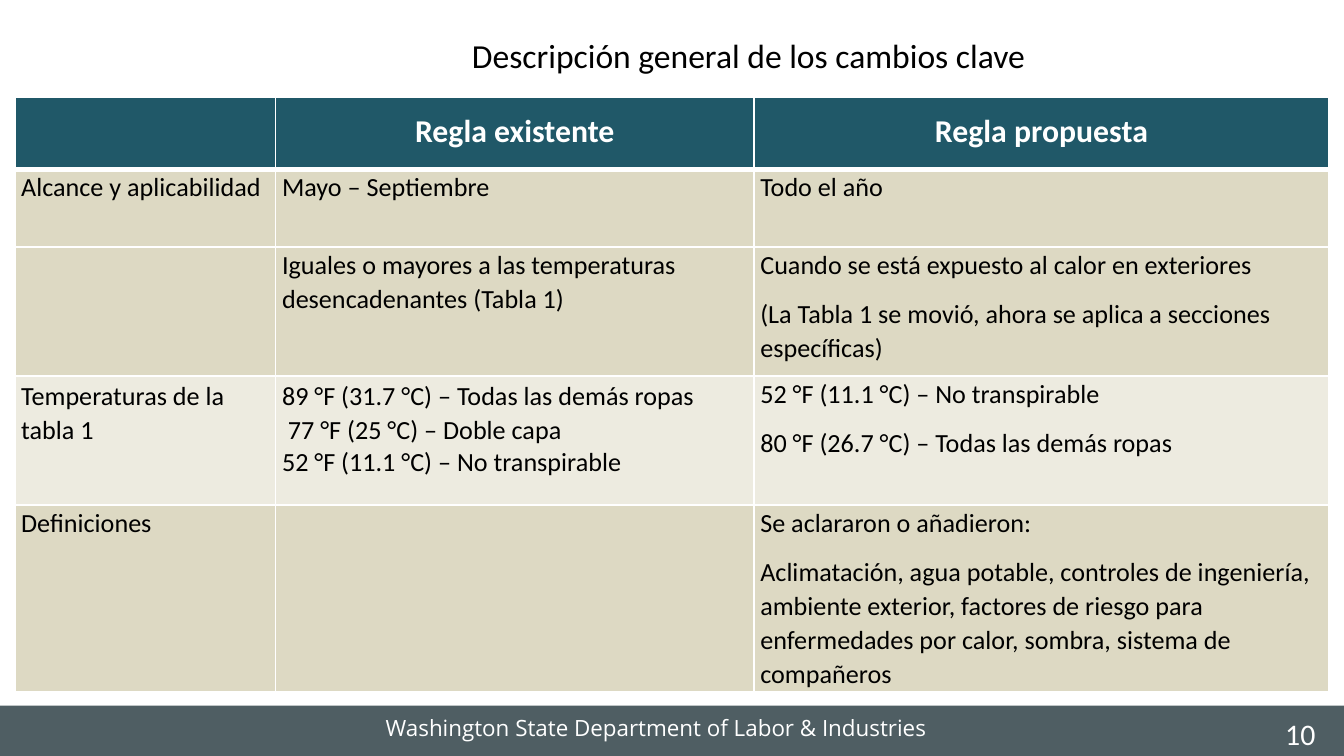
from dataclasses import dataclass
from typing import Optional, Union

from lxml import etree
from pptx import Presentation
from pptx.dml.color import RGBColor
from pptx.enum.shapes import MSO_SHAPE
from pptx.enum.text import PP_ALIGN
from pptx.oxml.ns import qn
from pptx.util import Cm, Pt

RECTANGLE = MSO_SHAPE.RECTANGLE
LEFT, CENTER = PP_ALIGN.LEFT, PP_ALIGN.CENTER


@dataclass(frozen=True)
class Theme:
    white: str = "FFFFFF"
    black: str = "000000"
    header: str = "205868"
    sand: str = "DDD9C3"
    pale: str = "EDEBE0"
    footer: str = "4F5E63"
    body_font: str = "Calibri"
    footer_font: str = "Open Sans"
    title_size: float = 18
    header_size: float = 17
    number_size: float = 16
    body_size: float = 14
    footer_size: float = 12


THEME = Theme()


@dataclass(frozen=True)
class Line:
    """One paragraph; spacing is a multiple (float) or an exact height (Pt)."""
    text: str
    before: float = 1.1
    spacing: Optional[Union[float, Pt]] = None


@dataclass(frozen=True)
class Row:
    height: float
    fill: str
    cells: tuple[tuple[Line, ...], ...]


@dataclass(frozen=True)
class Label:
    text: str
    left: float
    top: float
    width: float
    height: float
    size: float
    font: str
    color: str
    before: float


COLUMN_WIDTHS = (4.93, 9.04, 10.87)
EXACT = Pt(18)

ROWS = (
    Row(1.37, THEME.header, (
        (),
        (Line("Regla existente", 8.3),),
        (Line("Regla propuesta", 8.3),),
    )),
    Row(1.47, THEME.sand, (
        (Line("Alcance y aplicabilidad"),),
        (Line("Mayo – Septiembre"),),
        (Line("Todo el año"),),
    )),
    Row(2.44, THEME.sand, (
        (),
        (Line("Iguales o mayores a las temperaturas"),
         Line("desencadenantes (Tabla 1)", 1.2)),
        (Line("Cuando se está expuesto al calor en exteriores"),
         Line("(La Tabla 1 se movió, ahora se aplica a secciones", 9.2),
         Line("específicas)", 1.2)),
    )),
    Row(2.44, THEME.pale, (
        (Line("Temperaturas de la\vtabla 1", 0.7, EXACT),),
        (Line("89 °F (31.7 °C) – Todas las demás ropas\v 77 °F (25 °C) – Doble capa", 0.7, EXACT),
         Line("52 °F (11.1 °C) – No transpirable", 0.4)),
        (Line("52 °F (11.1 °C) – No transpirable"),
         Line("80 °F (26.7 °C) – Todas las demás ropas", 9.2)),
    )),
    Row(3.53, THEME.sand, (
        (Line("Definiciones"),),
        (),
        (Line("Se aclararon o añadieron:"),
         Line("Aclimatación, agua potable, controles de ingeniería, ambiente exterior, "
              "factores de riesgo para enfermedades por calor, sombra, sistema de compañeros",
              8.1, 1.07)),
    )),
)

LABELS = (
    Label("Washington State Department of Labor & Industries", 7.26, 13.46, 10.64, 0.56,
          THEME.footer_size, THEME.footer_font, THEME.white, 0.6),
    Label("10", 24.26, 13.49, 0.79, 0.64,
          THEME.number_size, THEME.body_font, THEME.white, 0),
    Label("Descripción general de los cambios clave", 8.89, 0.64, 10.54, 0.84,
          THEME.title_size, THEME.body_font, THEME.black, 1),
)


def write(para, text: str, *, size: float, color: str, font: str = THEME.body_font,
          bold: bool = False, align=LEFT, indent: float = 0, before: float = 0,
          spacing=None) -> None:
    para.text = text
    para.alignment = align
    para.space_before = Pt(before)
    para.line_spacing = spacing
    para._p.get_or_add_pPr().set("marL", str(Cm(indent)))
    for span in para.runs:
        span.font.size = Pt(size)
        span.font.name = font
        span.font.bold = bold
        span.font.color.rgb = RGBColor.from_string(color)


def set_borders(cell, top: float, bottom: float) -> None:
    properties = cell._tc.get_or_add_tcPr()
    sides = (("a:lnL", 1), ("a:lnR", 1), ("a:lnT", top), ("a:lnB", bottom))
    for position, (tag, points) in enumerate(sides):
        line = etree.Element(qn(tag), w=str(Pt(points)))
        fill = etree.SubElement(line, qn("a:solidFill"))
        etree.SubElement(fill, qn("a:srgbClr"), val=THEME.white)
        properties.insert(position, line)


def fill_cell(cell, lines: tuple[Line, ...], fill: str, is_header: bool) -> None:
    cell.fill.solid()
    cell.fill.fore_color.rgb = RGBColor.from_string(fill)
    cell.margin_left = cell.margin_right = cell.margin_bottom = 0
    cell.margin_top = Cm(0.3 if is_header else 0.05)
    frame = cell.text_frame
    for index, line in enumerate(lines):
        para = frame.add_paragraph() if index else frame.paragraphs[0]
        write(para, line.text, before=line.before, spacing=line.spacing, bold=is_header,
              size=THEME.header_size if is_header else THEME.body_size,
              color=THEME.white if is_header else THEME.black,
              align=CENTER if is_header else LEFT, indent=0 if is_header else 0.12)


def add_rules_table(page) -> None:
    table = page.shapes.add_table(
        len(ROWS), len(COLUMN_WIDTHS), Cm(0.28), Cm(1.83),
        Cm(sum(COLUMN_WIDTHS)), Cm(sum(row.height for row in ROWS))).table
    table.first_row = table.horz_banding = False
    for column, width in zip(table.columns, COLUMN_WIDTHS):
        column.width = Cm(width)
    for row_index, row in enumerate(ROWS):
        table.rows[row_index].height = Cm(row.height)
        for column_index, lines in enumerate(row.cells):
            cell = table.cell(row_index, column_index)
            fill_cell(cell, lines, row.fill, row_index == 0)
            set_borders(cell, top=3 if row_index == 1 else 1,
                        bottom=3 if row_index == 0 else 1)


def add_label(page, label: Label) -> None:
    box = page.shapes.add_textbox(Cm(label.left), Cm(label.top),
                                  Cm(label.width), Cm(label.height))
    frame = box.text_frame
    frame.word_wrap = False
    frame.margin_left = frame.margin_right = frame.margin_bottom = 0
    frame.margin_top = Cm(0.03)
    write(frame.paragraphs[0], label.text, size=label.size, font=label.font,
          color=label.color, before=label.before, indent=0.03)


def add_footer_band(page, deck) -> None:
    top = Cm(13.34)
    band = page.shapes.add_shape(RECTANGLE, 0, top, deck.slide_width, deck.slide_height - top)
    band.shadow.inherit = False
    band.fill.solid()
    band.fill.fore_color.rgb = RGBColor.from_string(THEME.footer)
    band.line.fill.background()


def main() -> None:
    deck = Presentation()
    deck.slide_width, deck.slide_height = Cm(25.4), Cm(14.29)
    page = deck.slides.add_slide(deck.slide_layouts[6])
    add_footer_band(page, deck)
    add_rules_table(page)
    for label in LABELS:
        add_label(page, label)
    deck.save("out.pptx")


if __name__ == "__main__":
    main()
